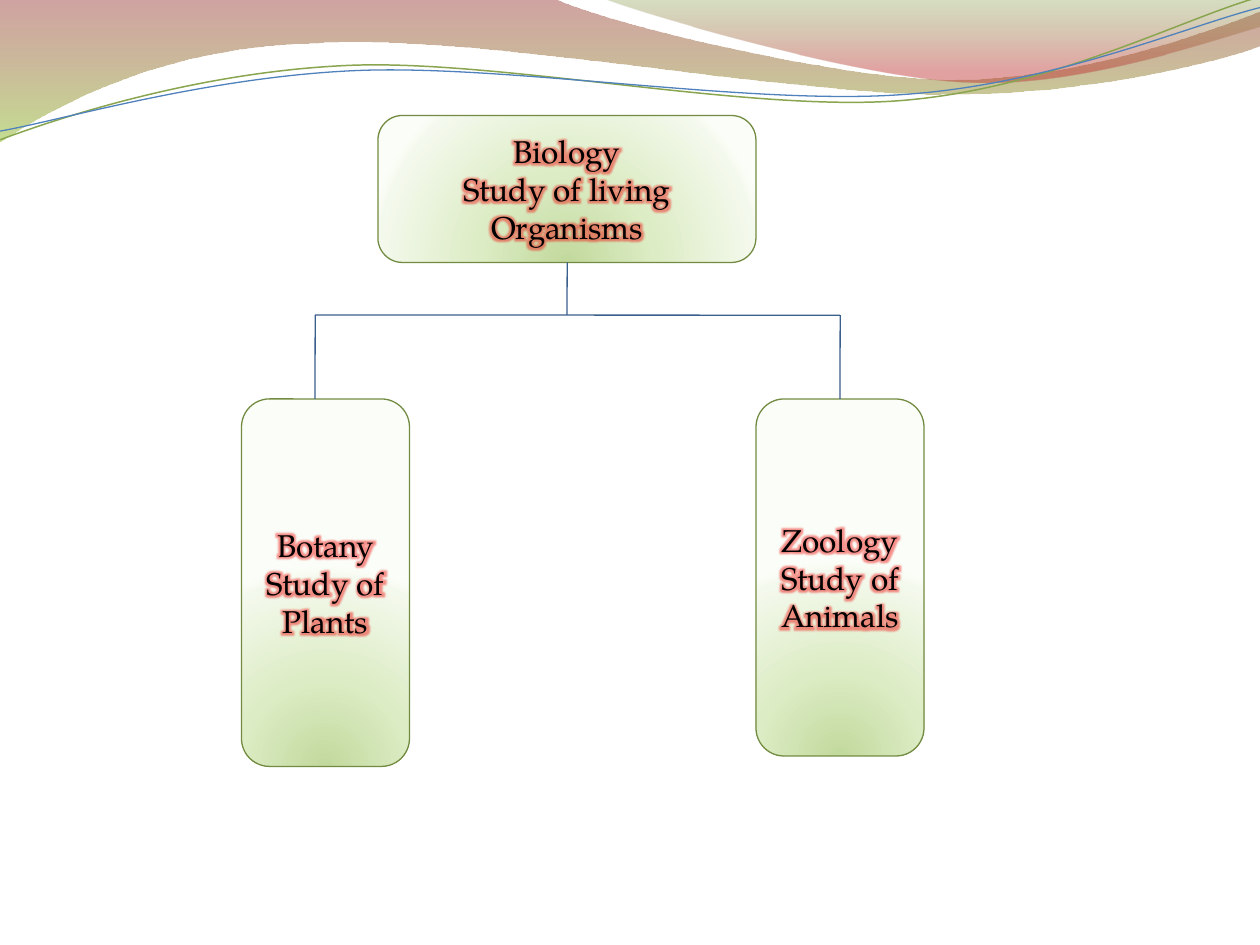
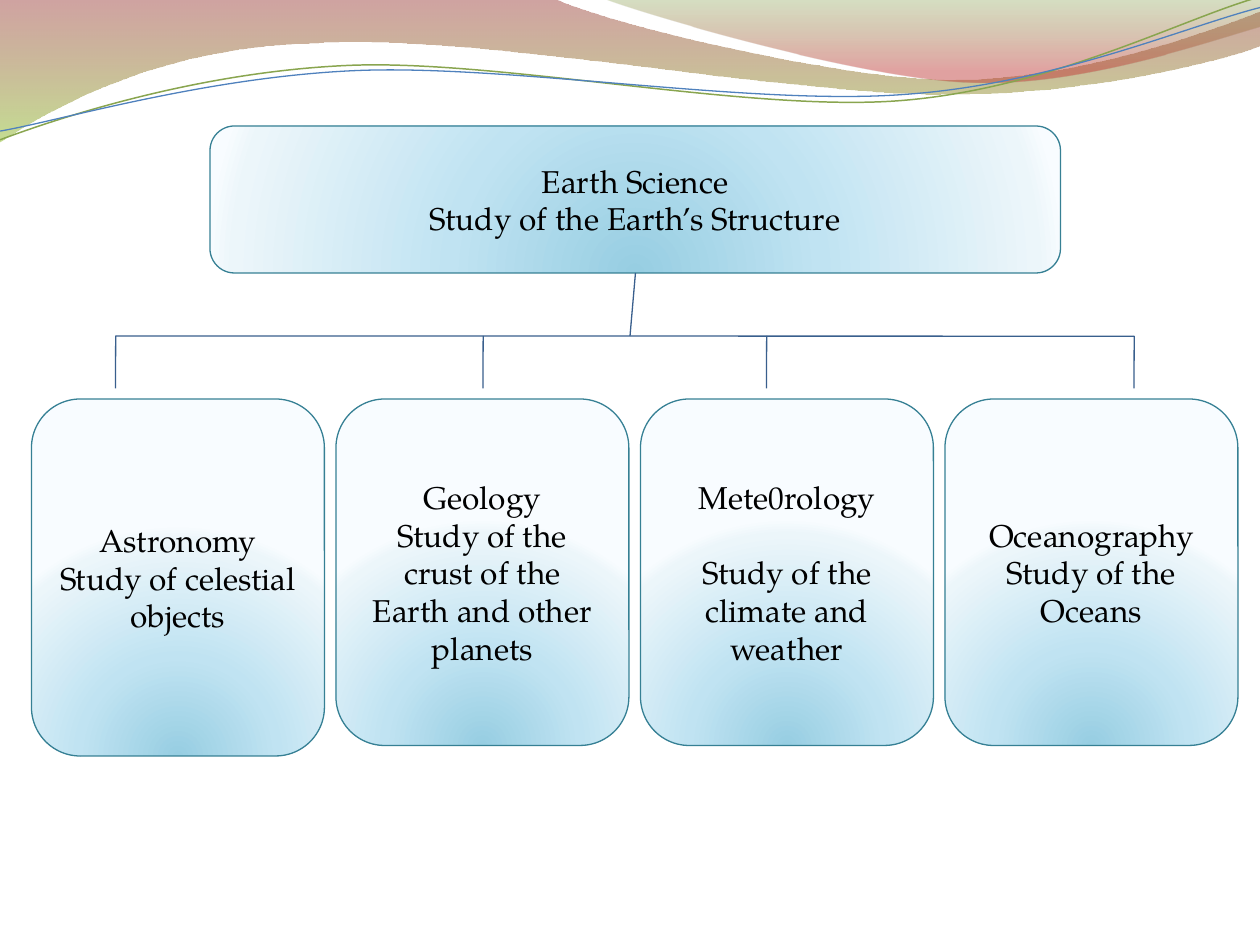
from dataclasses import dataclass

from pptx import Presentation
from pptx.dml.color import RGBColor
from pptx.enum import shapes as kinds, text
from pptx.oxml import parse_xml
from pptx.oxml.ns import nsdecls, qn
from pptx.util import Pt

COLORS = {
    "text": "000000", "connector": "395F8D", "glow": "F01E1A",
    "biology_line": "738B41", "earth_line": "368094",
    "green_wave": "89A54F", "blue_wave": "4F81BD",
    "maroon": "973330", "lime": "95C238", "moss": "769537", "red": "BE3330",
}
RADIAL = {
    "biology": ["C2D99D", "DCECC4", "F4F9ED", "FBFEF8"],
    "earth": ["97CEE2", "C0E3F2", "ECF6FA", "F8FCFF"],
}
RADIAL_STOPS = (0, 43, 93, 100)
FONT = "TeX Gyre Pagella"
SLIDE_W, SLIDE_H = 720, 540
LEAN = 0.12  # connectors run very slightly off the straight

# Outlines: a start point, then lines (x, y) and Bezier curves (three points).
BROAD_WAVE = [
    (0, 0), (316.8, -0.7),
    (342.7, 12.2, 478.1, 45.4, 545.8, 45.4), (614.2, 45.4, 689.8, 18.7, 720, 6.5),
    (720.7, 25.9),
    (707.8, 31.7, 626.4, 54.7, 537.1, 54), (447.8, 54, 275, 20.2, 185, 24.5),
    (92.9, 25.9, 33.1, 59.8, -0.7, 81.4), (0, 0),
]
CORNER_WAVE = [
    (344.9, -0.7),
    (366.5, 7.9, 491, 44.6, 553.7, 46.8), (616.3, 49.7, 691.9, 23, 720, 15.1),
    (720, 0), (344.9, -0.7),
]
GREEN_STRAND = [
    (0, 79.9),
    (34.6, 67, 113.8, 41, 199.4, 37.4), (284.4, 33.8, 427, 64.1, 513.4, 57.6),
    (599.8, 51.1, 675.4, 10.8, 718.6, -1.4),
]
BLUE_STRAND = [
    (0, 74.9),
    (33.8, 69.1, 118.1, 43.9, 203.8, 40.3), (290.2, 36.7, 429.8, 60.5, 516.2, 54),
    (601.9, 48.2, 677.5, 15.1, 720, 4.3),
]


@dataclass
class Branch:
    lines: list
    height: float
    drop_x: float
    gap: float = 0


def rgb(name):
    return RGBColor.from_string(COLORS[name])


def set_gradient(shape, stops, direction):
    """Fill with (position, hex, opacity) stops, all in percent."""
    stop_xml = "".join(
        f'<a:gs pos="{pos * 1000}"><a:srgbClr val="{color}">'
        f'<a:alpha val="{opacity * 1000}"/></a:srgbClr></a:gs>'
        for pos, color, opacity in stops)
    gradient = parse_xml(f'<a:gradFill {nsdecls("a")} rotWithShape="1">'
                         f'<a:gsLst>{stop_xml}</a:gsLst>{direction}</a:gradFill>')
    shape.fill.background()
    properties = shape.element.spPr
    properties.replace(properties.find(qn("a:noFill")), gradient)


def add_outline(slide, outline, close):
    """Build a freeform, then join each curve's three points into a Bezier."""
    start, *segments = outline
    builder = slide.shapes.build_freeform(*map(Pt, start))
    points = [tuple(map(Pt, segment[i:i + 2]))
              for segment in segments for i in range(0, len(segment), 2)]
    builder.add_line_segments(points, close=close)
    shape = builder.convert_to_shape()
    shape.shadow.inherit = False
    steps = iter(list(shape.element.iter(qn("a:lnTo"))))
    for segment in segments:
        step = next(steps)
        if len(segment) == 6:
            curve = parse_xml(f'<a:cubicBezTo {nsdecls("a")}/>')
            step.addprevious(curve)
            for part in (step, next(steps), next(steps)):
                curve.append(part[0])
                part.getparent().remove(part)
    return shape


def add_wave_header(slide, layout):
    """Draw the waves and move them to the layout, so every slide shares them."""
    parts = []
    for outline, stops in (
            (BROAD_WAVE, [(0, COLORS["maroon"], 45), (100, COLORS["lime"], 55)]),
            (CORNER_WAVE, [(0, COLORS["moss"], 30), (80, COLORS["red"], 45)])):
        wave = add_outline(slide, outline, True)
        set_gradient(wave, stops, '<a:lin ang="5400000" scaled="0"/>')
        wave.line.fill.background()
        parts.append(wave)
    for outline, color, width in ((GREEN_STRAND, "green_wave", 0.85),
                                  (BLUE_STRAND, "blue_wave", 0.75)):
        strand = add_outline(slide, outline, False)
        strand.fill.background()
        strand.line.color.rgb = rgb(color)
        strand.line.width = Pt(width)
        parts.append(strand)
    for part in parts:
        layout.shapes.element.append(part.element)


def add_glow(shape):
    for latin in shape.element.iter(qn("a:latin")):
        latin.addprevious(parse_xml(
            f'<a:effectLst {nsdecls("a")}><a:glow rad="101600">'
            f'<a:srgbClr val="{COLORS["glow"]}"><a:alpha val="50000"/></a:srgbClr>'
            '</a:glow></a:effectLst>'))


def add_science_box(slide, box, lines, theme, glow, gap=0):
    """Add a rounded box; gap is the space above its last paragraph."""
    shape = slide.shapes.add_shape(kinds.MSO_SHAPE.ROUNDED_RECTANGLE, *map(Pt, box))
    shape.shadow.inherit = False
    stops = [(pos, color, 100) for pos, color in zip(RADIAL_STOPS, RADIAL[theme])]
    set_gradient(shape, stops, '<a:path path="circle"><a:fillToRect l="50000" '
                               't="130000" r="50000" b="-30000"/></a:path>')
    shape.line.color.rgb = rgb(f"{theme}_line")
    shape.line.width = Pt(0.75)
    frame = shape.text_frame
    frame.word_wrap = True
    frame.vertical_anchor = text.MSO_ANCHOR.MIDDLE
    for index, line in enumerate(lines):
        paragraph = frame.paragraphs[0] if index == 0 else frame.add_paragraph()
        paragraph.alignment = text.PP_ALIGN.CENTER
        run = paragraph.add_run()
        run.text = line
        run.font.size = Pt(18)
        run.font.name = FONT
        run.font.color.rgb = rgb("text")
    if gap:
        paragraph.space_before = Pt(gap)
    if glow:
        add_glow(shape)


def add_link(slide, *ends):
    link = slide.shapes.add_connector(kinds.MSO_CONNECTOR.STRAIGHT, *map(Pt, ends))
    link.line.color.rgb = rgb("connector")
    link.line.width = Pt(0.75)
    link.element.spPr.append(parse_xml(f'<a:effectLst {nsdecls("a")}/>'))


def add_science_tree(slide, area, root, branches, theme, *, root_x, root_width,
                     pitch, branch_width, trunk_x, bar_y, drop_end, branch_y, glow=False):
    """Place a root box over its branches; offsets count from the area's corner."""
    left, top = area
    root_height = 84
    add_science_box(slide, (left + root_x, top, root_width, root_height),
                    root, theme, glow)
    for index, branch in enumerate(branches):
        box = (left + index * pitch, top + branch_y, branch_width, branch.height)
        add_science_box(slide, box, branch.lines, theme, glow, branch.gap)
    bar = top + bar_y
    for branch in branches:
        x = left + branch.drop_x
        add_link(slide, x + LEAN, bar, x, top + drop_end)
    add_link(slide, left + root_x + root_width / 2 + LEAN, top + root_height,
             left + trunk_x, bar)
    add_link(slide, left + branches[0].drop_x, bar,
             left + branches[-1].drop_x, bar + LEAN)


def main():
    prs = Presentation()
    prs.slide_width, prs.slide_height = Pt(SLIDE_W), Pt(SLIDE_H)
    layout = prs.slide_layouts[6]

    biology = prs.slides.add_slide(layout)
    add_wave_header(biology, layout)
    add_science_tree(
        biology, (138, 66), ["Biology", "Study of living Organisms"],
        [Branch(["Botany", "Study of Plants"], 210, 42),
         Branch(["Zoology", "Study of Animals"], 204, 342)],
        "biology", root_x=78, root_width=216, pitch=294, branch_width=96,
        trunk_x=186, bar_y=114, drop_end=162, branch_y=162, glow=True)

    earth = prs.slides.add_slide(layout)
    add_science_tree(
        earth, (18, 72), ["Earth Science", "Study of the Earth’s Structure"],
        [Branch(["Astronomy", "Study of celestial objects"], 204, 48),
         Branch(["Geology", "Study of the crust of the Earth and other planets"], 198, 258),
         Branch(["Mete0rology", "Study of the climate and weather"], 198, 420, gap=21.6),
         Branch(["Oceanography", "Study of the Oceans"], 198, 630)],
        "earth", root_x=102, root_width=486, pitch=174, branch_width=167.4,
        trunk_x=342, bar_y=120, drop_end=150, branch_y=156)

    prs.save("out.pptx")


if __name__ == "__main__":
    main()
